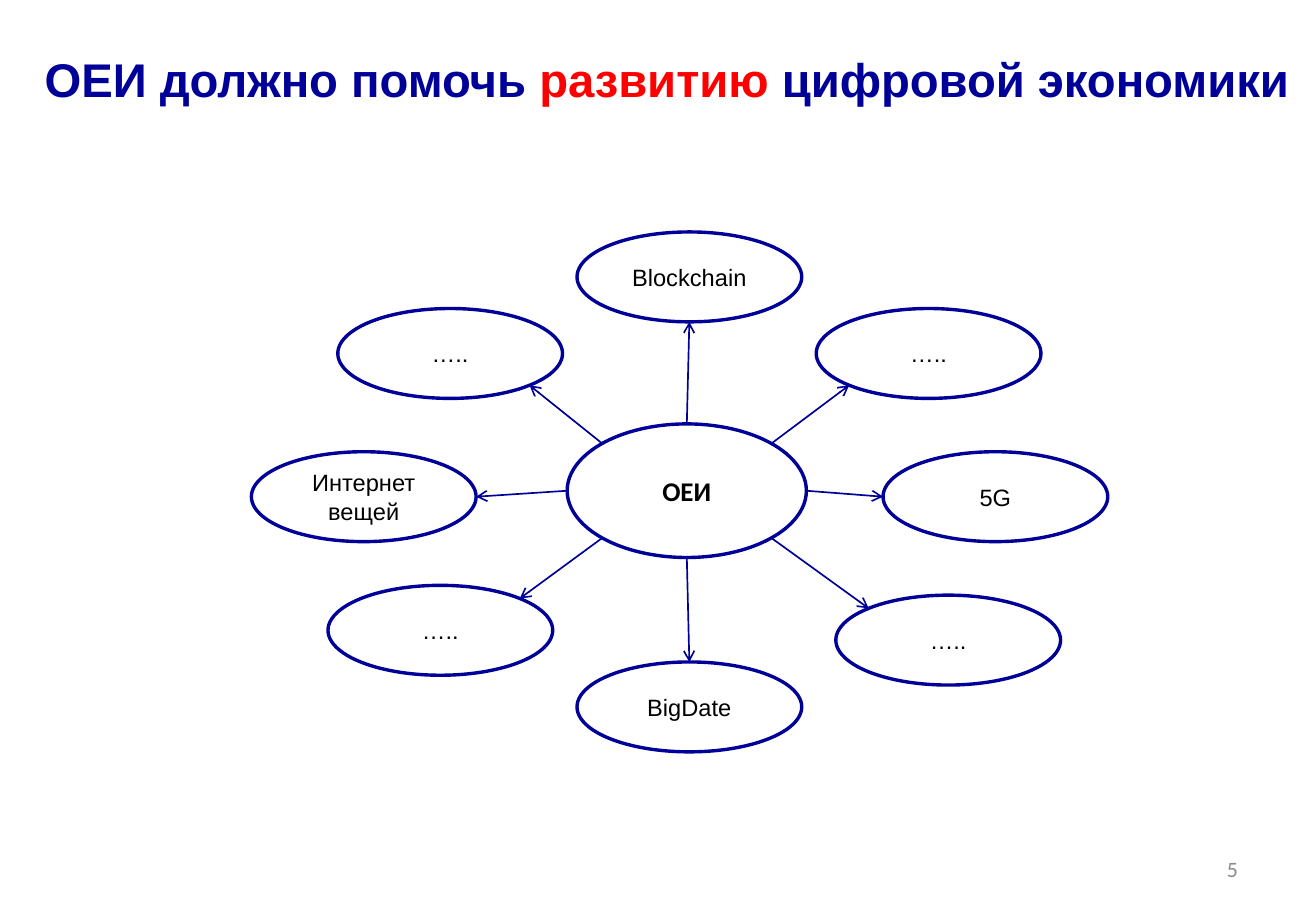
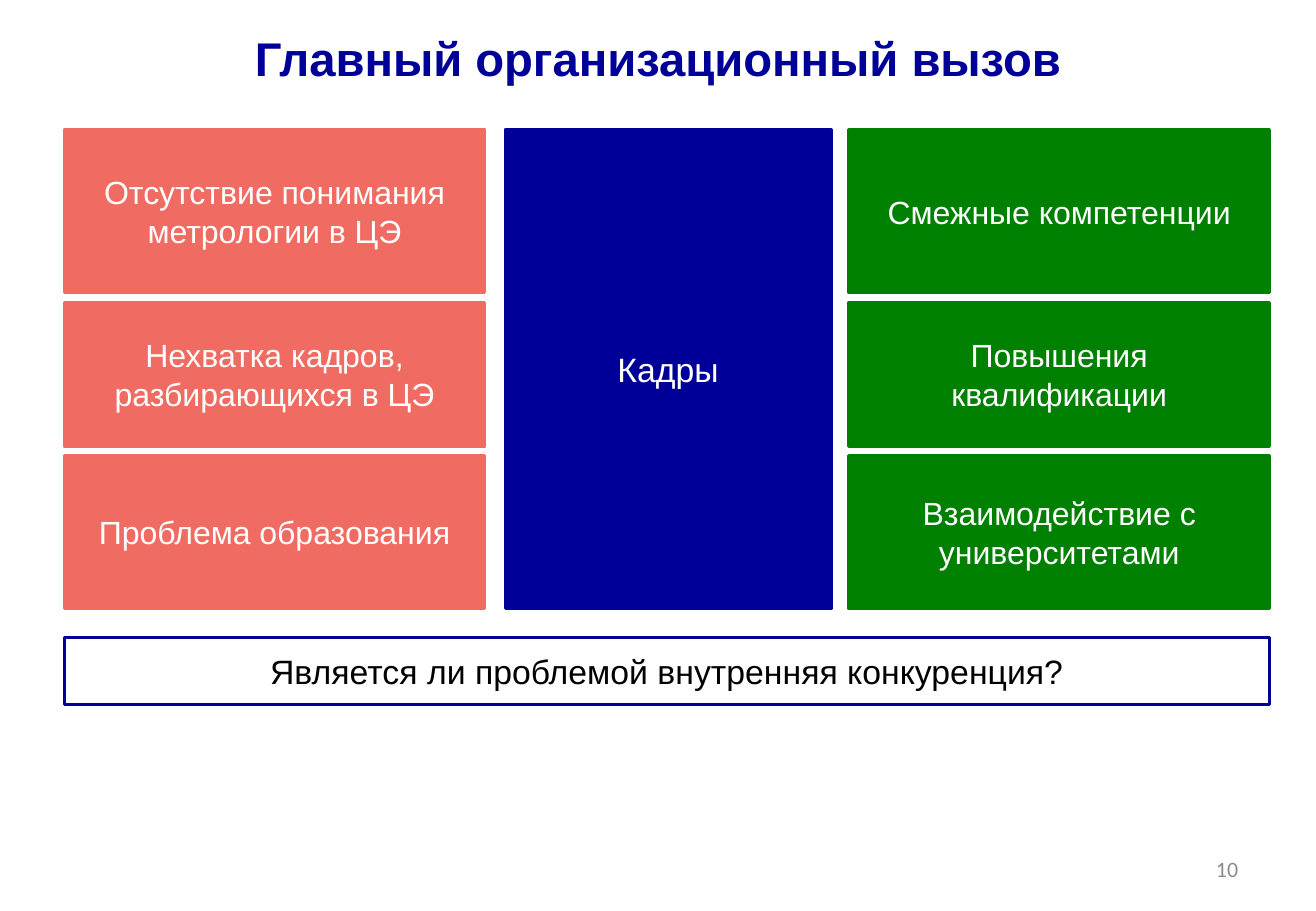
from lxml import etree
from pptx import Presentation
from pptx.dml.color import RGBColor
from pptx.enum import shapes, text
from pptx.oxml import ns
from pptx.util import Pt
import math

NAVY, RED, CORAL, GREEN = "000099", "FF0000", "F06C62", "008000"
WHITE, BLACK, GREY = "FFFFFF", "000000", "8C8C8C"
CENTER, RIGHT, LEFT = text.PP_ALIGN.CENTER, text.PP_ALIGN.RIGHT, text.PP_ALIGN.LEFT
OVAL, RECTANGLE = shapes.MSO_SHAPE.OVAL, shapes.MSO_SHAPE.RECTANGLE

PAGE_WIDTH, PAGE_HEIGHT = 780, 540
HUB = (336.2, 251.3, 141.8, 79.2)
TOPIC_SIZE = (133.2, 53.3)
TOPICS = [
    ("Blockchain", 342, 137.5, (0, -1)),
    ("…..", 483.8, 182.9, (1, -1)),
    ("5G", 523.4, 267.8, (1, 0)),
    ("…..", 495.4, 352.8, (1, 1)),
    ("BigDate", 342, 392.4, (0, 1)),
    ("…..", 194.4, 347, (-1, 1)),
    ("Интернет вещей", 149, 267.8, (-1, 0)),
    ("…..", 200.2, 182.9, (-1, -1)),
]

GRID_LEFT, GRID_TOP, GRID_WIDTH, ROW_GAP = 38.2, 77, 714.2, 5.8
ROW_HEIGHTS = [96.5, 85, 90.7]
SIDE_WIDTH, MIDDLE_LEFT, MIDDLE_WIDTH = 249.1, 299.5, 193
PROBLEMS = [
    "Отсутствие понимания метрологии в ЦЭ",
    "Нехватка кадров, разбирающихся в ЦЭ",
    "Проблема образования",
]
SOLUTIONS = [
    "Смежные компетенции",
    "Повышения квалификации",
    "Взаимодействие с университетами",
]


def color(value):
    return RGBColor.from_string(value)


def style_span(span, size, ink, font="Arial", bold=False):
    span.font.size = Pt(size)
    span.font.name = font
    span.font.bold = bold
    span.font.color.rgb = color(ink)


def add_node(page, kind, area, words, fill, outline, size, ink, font="Arial", bold=False):
    node = page.shapes.add_shape(kind, *map(Pt, area))
    node.shadow.inherit = False
    node.fill.solid()
    node.fill.fore_color.rgb = color(fill)
    node.line.color.rgb = color(outline)
    node.line.width = Pt(2)
    frame = node.text_frame
    frame.word_wrap = True
    frame.vertical_anchor = text.MSO_ANCHOR.MIDDLE
    frame.text = words
    para = frame.paragraphs[0]
    para.alignment = CENTER
    style_span(para.runs[0], size, ink, font, bold)


def add_label(page, area, parts, size, align, font="Arial", bold=False, wrap=True):
    box = page.shapes.add_textbox(*map(Pt, area))
    frame = box.text_frame
    frame.word_wrap = wrap
    if not wrap:
        frame.auto_size = text.MSO_AUTO_SIZE.SHAPE_TO_FIT_TEXT
    frame.vertical_anchor = text.MSO_ANCHOR.MIDDLE
    para = frame.paragraphs[0]
    para.alignment = align
    for words, ink in parts:
        span = para.add_run()
        span.text = words
        style_span(span, size, ink, font, bold)


def add_title(page, area, parts, align=CENTER, wrap=True):
    add_label(page, area, parts, 28, align, bold=True, wrap=wrap)


def add_page_number(page, number):
    add_label(page, (558.7, 500.4, 182.2, 28.8), [(number, GREY)], 13, RIGHT, "Calibri")


def rim_point(area, direction):
    left, top, width, height = area
    across, down = direction
    reach = math.hypot(across, down)
    return (left + width / 2 * (1 + across / reach),
            top + height / 2 * (1 + down / reach))


def add_arrow(page, start, end):
    arrow = page.shapes.add_connector(
        shapes.MSO_CONNECTOR.STRAIGHT, *map(Pt, start + end))
    arrow.line.color.rgb = color(NAVY)
    arrow.line.width = Pt(1)
    properties = arrow.element.spPr
    outline = properties.find(ns.qn("a:ln"))
    etree.SubElement(outline, ns.qn("a:tailEnd"), type="arrow")
    etree.SubElement(properties, ns.qn("a:effectLst"))


def build_topics_page(page):
    add_node(page, OVAL, HUB, "ОЕИ", WHITE, NAVY, 16, BLACK, "Calibri", True)
    for words, left, top, (across, down) in TOPICS:
        area = (left, top) + TOPIC_SIZE
        add_node(page, OVAL, area, words, WHITE, NAVY, 14, BLACK)
        add_arrow(page, rim_point(HUB, (across, down)), rim_point(area, (-across, -down)))
    title = [("ОЕИ должно помочь ", NAVY), ("развитию", RED), (" цифровой экономики", NAVY)]
    add_title(page, (19.4, 25.9, 761, 41), title, LEFT, wrap=False)
    add_page_number(page, "5")


def build_challenge_page(page):
    add_title(page, (0, 9.4, PAGE_WIDTH, 49), [("Главный организационный вызов", NAVY)])
    right_left = GRID_LEFT + GRID_WIDTH - SIDE_WIDTH
    for left, fill, entries in ((GRID_LEFT, CORAL, PROBLEMS), (right_left, GREEN, SOLUTIONS)):
        top = GRID_TOP
        for words, height in zip(entries, ROW_HEIGHTS):
            add_node(page, RECTANGLE, (left, top, SIDE_WIDTH, height), words, fill, fill, 19, WHITE)
            top += height + ROW_GAP
    grid_height = sum(ROW_HEIGHTS) + ROW_GAP * (len(ROW_HEIGHTS) - 1)
    add_node(page, RECTANGLE, (MIDDLE_LEFT, GRID_TOP, MIDDLE_WIDTH, grid_height),
             "Кадры", NAVY, NAVY, 20, WHITE)
    add_node(page, RECTANGLE, (GRID_LEFT, 378, GRID_WIDTH, 39.6),
             "Является ли проблемой внутренняя конкуренция?", WHITE, NAVY, 20, BLACK)
    add_page_number(page, "10")


def main():
    deck = Presentation()
    deck.slide_width, deck.slide_height = Pt(PAGE_WIDTH), Pt(PAGE_HEIGHT)
    for build in (build_topics_page, build_challenge_page):
        build(deck.slides.add_slide(deck.slide_layouts[6]))
    deck.save("out.pptx")


if __name__ == "__main__":
    main()
